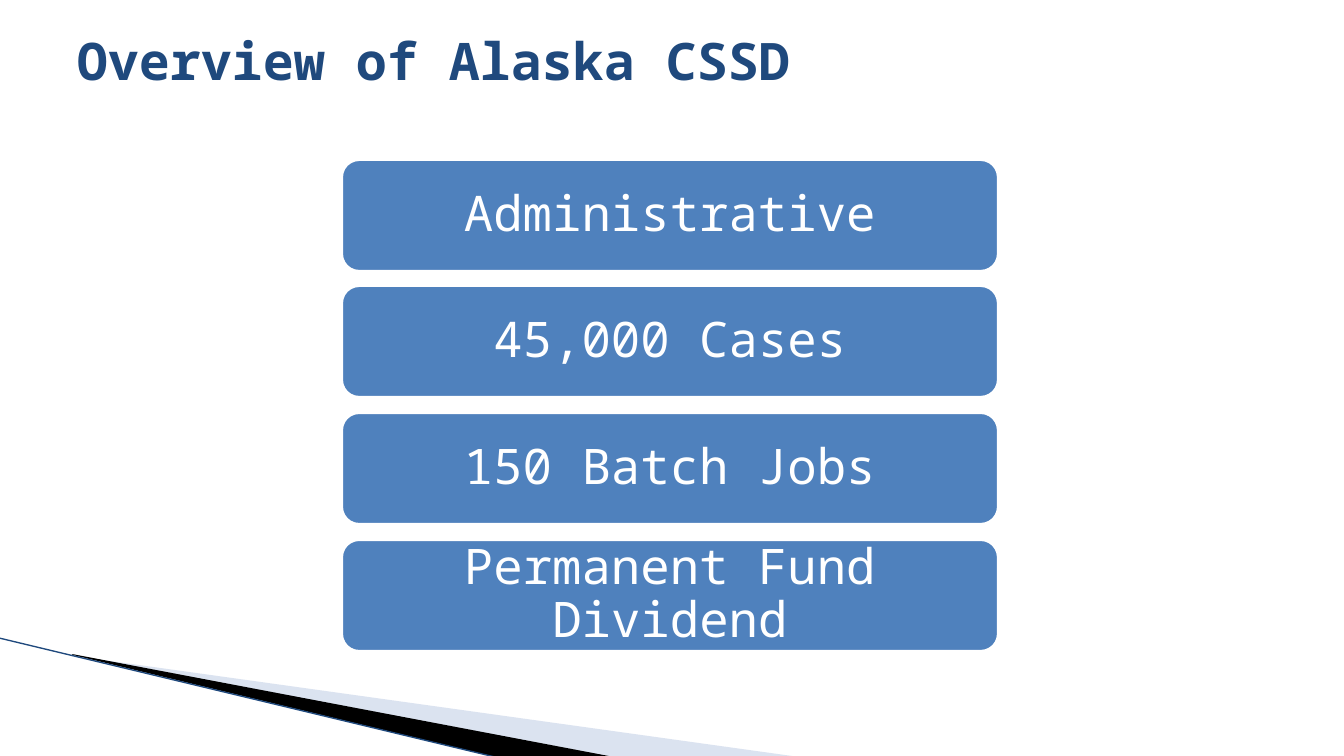
"""Build the Alaska CSSD overview slide."""
from lxml import etree
from pptx import Presentation
from pptx import util as u
from pptx.dml.color import RGBColor
from pptx.enum import shapes, text
from pptx.oxml import ns

PX = 914400 / 100.8
FONT = "Noto Sans Mono"
WHITE = RGBColor(0xFF, 0xFF, 0xFF)
BLACK = RGBColor(0, 0, 0)
NAVY = RGBColor(0x1F, 0x49, 0x7D)
BLUE = RGBColor(0x4F, 0x81, 0xBD)
PALE = RGBColor(0xA7, 0xB9, 0xDB)

FACTS = ["Administrative", "45,000 Cases", "150 Batch Jobs", "Permanent Fund Dividend"]


def px(num):
    """Turn pixels into EMU."""
    return u.Emu(round(num * PX))


def write(shape, words, size, color, bold=False, align=text.PP_ALIGN.LEFT,
          anchor=text.MSO_ANCHOR.TOP, side=10, top=0, lines=1.0):
    """Put one formatted paragraph into a shape."""
    frame = shape.text_frame
    frame.word_wrap = True
    frame.vertical_anchor = anchor
    frame.margin_left = frame.margin_right = px(side)
    frame.margin_top = frame.margin_bottom = px(top)
    para = frame.paragraphs[0]
    para.alignment = align
    para.line_spacing = lines
    run = para.add_run()
    run.text = words
    font = run.font
    font.name, font.size, font.bold = FONT, u.Pt(size), bold
    font.color.rgb = color


def paint(shape, color, alpha=None):
    """Give a shape a flat fill without line or shadow."""
    shape.shadow.inherit = False
    shape.line.fill.background()
    shape.fill.solid()
    shape.fill.fore_color.rgb = color
    if alpha is not None:
        tone = shape.fill._xPr.find(".//" + ns.qn("a:srgbClr"))
        etree.SubElement(tone, ns.qn("a:alpha")).set("val", str(alpha * 1000))


def wedge(slide, points, color, alpha=None):
    """Draw a closed polygon through the points."""
    build = slide.shapes.build_freeform(*points[0], scale=PX)
    build.add_line_segments(points[1:], close=True)
    paint(build.convert_to_shape(), color, alpha)


def rule(slide, start, end, color, width):
    """Draw a straight line."""
    line = slide.shapes.add_connector(
        shapes.MSO_CONNECTOR.STRAIGHT, *map(px, start + end))
    line.line.color.rgb = color
    line.line.width = u.Pt(width)
    etree.SubElement(line._element.spPr, ns.qn("a:effectLst"))


def bar(slide, top, words):
    """Draw a rounded bar with centred words."""
    shape = slide.shapes.add_shape(
        shapes.MSO_SHAPE.ROUNDED_RECTANGLE, px(340), px(top), px(660), px(115))
    paint(shape, BLUE)
    shape.line.color.rgb = WHITE
    shape.line.width = u.Pt(4.33)
    write(shape, words, 35, WHITE, align=text.PP_ALIGN.CENTER,
          anchor=text.MSO_ANCHOR.MIDDLE, side=20, top=20, lines=0.9)


def main():
    """Build and save the slide."""
    deck = Presentation()
    deck.slide_width, deck.slide_height = px(1344), px(756)
    slide = deck.slides.add_slide(deck.slide_layouts[6])
    wedge(slide, [(74, 656), (799, 757), (613, 757), (74, 655)], PALE, 40)
    wedge(slide, [(72, 654), (614, 757), (500, 758), (73, 655)], BLACK)
    rule(slide, (-1, 638), (499, 758), NAVY, 0.95)
    for row, fact in enumerate(FACTS):
        bar(slide, 158 + row * 380 // 3, fact)
    title = slide.shapes.add_textbox(px(67), px(29), px(1210), px(126))
    write(title, "Overview of Alaska CSSD", 36.9, NAVY, bold=True)
    deck.save("out.pptx")


if __name__ == "__main__":
    main()
